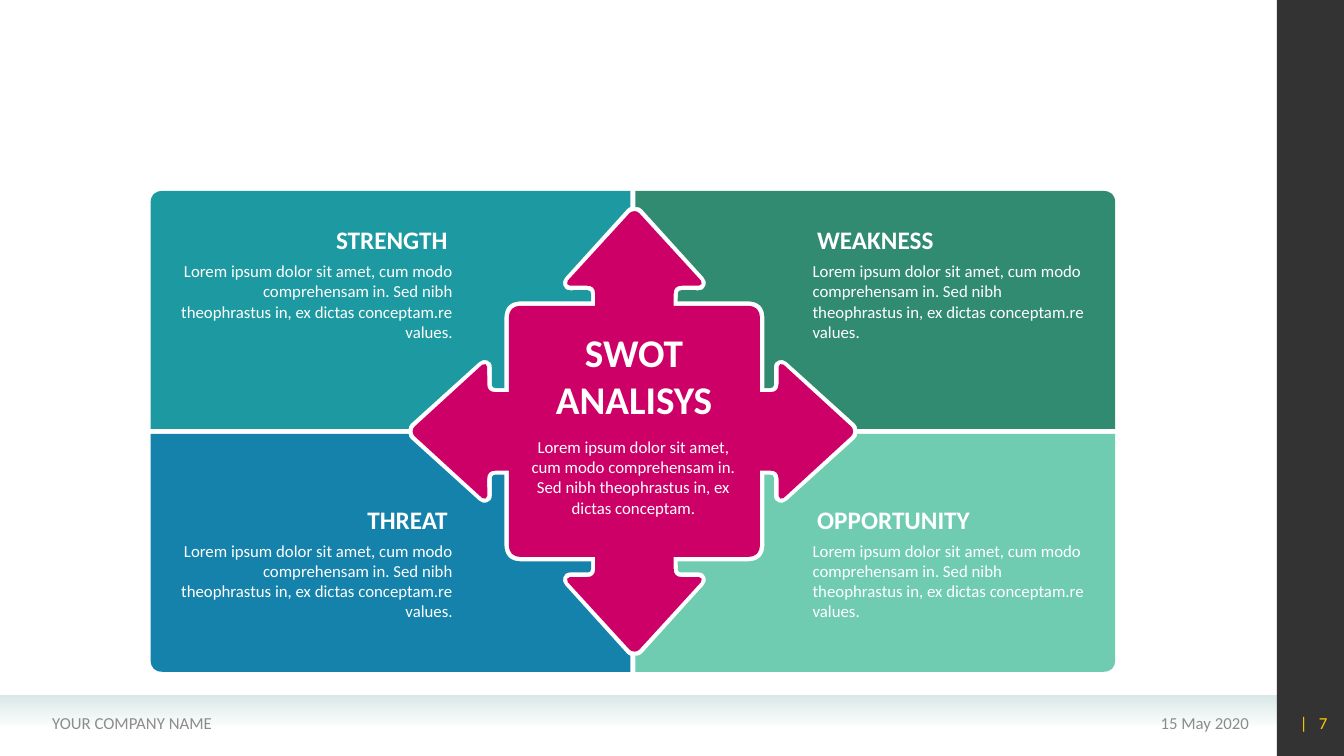
"""Build a SWOT slide: four quadrants around a four-way arrow."""
from math import dist

from lxml import etree
from pptx import Presentation
from pptx.dml.color import RGBColor
from pptx.enum.shapes import MSO_SHAPE
from pptx.enum.text import MSO_ANCHOR, MSO_AUTO_SIZE, PP_ALIGN
from pptx.oxml.ns import qn
from pptx.util import Pt

PX = 4572
RECT = MSO_SHAPE.RECTANGLE
TOP, MIDDLE = MSO_ANCHOR.TOP, MSO_ANCHOR.MIDDLE
LEFT, CENTER, RIGHT = PP_ALIGN.LEFT, PP_ALIGN.CENTER, PP_ALIGN.RIGHT
FIT = MSO_AUTO_SIZE.NONE
THEME = {
    "font": "Calibri", "title": 28, "head": 18, "body": 12,
    "white": "FFFFFF", "gray": "8C8C8C", "gold": "FFCC00",
    "mist": "D9E9E8", "black": "000000", "pink": "CC0066",
    "teal": "1D9AA1", "green": "318B71", "blue": "1482AB", "mint": "70CCB1",
}
MID_X, MID_Y, SHIFT = 1256, 856, 3
SHORT = ("Lorem ipsum dolor sit amet, cum modo comprehensam in. "
         "Sed nibh theophrastus in, ex dictas conceptam.")
LONG = SHORT + "re values."


def color(name):
    return RGBColor.from_string(THEME[name])


def write(box, lines, size, tint="white", align=LEFT, anchor=TOP, bold=False, wrap=True):
    frame = box.text_frame
    frame.auto_size = FIT
    frame.word_wrap = wrap
    frame.vertical_anchor = anchor
    for i, line in enumerate(lines):
        para = frame.paragraphs[0] if i == 0 else frame.add_paragraph()
        para.alignment = align
        for text in line:
            run = para.add_run()
            run.text = text
            run.font.name = THEME["font"]
            run.font.size = Pt(THEME[size])
            run.font.bold = bold
            run.font.color.rgb = color(tint)
    return frame


deck = Presentation()
deck.slide_width, deck.slide_height = 2667 * PX, 1500 * PX
slide = deck.slides.add_slide(deck.slide_layouts[5])
shapes = slide.shapes

band = shapes.add_shape(RECT, 0, 1380 * PX, 2534 * PX, 62 * PX)
band.fill.gradient()
band.fill.gradient_angle = 270
for stop in band.fill.gradient_stops:
    stop.color.rgb = color("mist")
bar = shapes.add_shape(RECT, 2534 * PX, 0, 133 * PX, 1500 * PX)
bar.fill.solid()
bar.fill.fore_color.rgb = color("black")
for panel, alpha in ((band, 0), (bar, 80000)):
    panel.line.fill.background()
    panel.shadow.inherit = False
    tone = list(panel.element.spPr.iter(qn("a:srgbClr")))[-1]
    etree.SubElement(tone, qn("a:alpha"), val=str(alpha))

for x, width, parts, tint, align in (
    (1820, 678, ["15 May 2020"], "gray", RIGHT),
    (84, 980, ["YOUR COMPANY NAME"], "gray", LEFT),
    (2520, 134, ["| ", "7"], "gold", RIGHT),
):
    box = shapes.add_textbox(x * PX, 1394 * PX, width * PX, 80 * PX)
    frame = write(box, [parts], "body", tint, align, MIDDLE)
frame.paragraphs[0].runs[0].font._element.set("spc", "270")

half = [(6, 437, 6), (135, 296, 4), (132, 289, 4), (78, 289, 16), (78, 249, 0)]
turn = half + [(249, 249, 24)] + [(y, x, r) for x, y, r in half[::-1]]
cross = []
for _ in range(4):
    cross += turn
    turn = [(y, -x, r) for x, y, r in turn]

half = [(5, 445, 0), (11, 445, 6), (144, 298, 10), (138, 280, 10), (86, 280, 7), (86, 258, 0)]
quad = half + [(258, 258, 34)] + [(y, x, r) for x, y, r in half[::-1]]
quad += [(957, 5, 0), (957, 477, 24), (5, 477, 0)]

for name, plan, sx, sy in (
    ("pink", cross, 1, 1), ("teal", quad, -1, -1), ("green", quad, 1, -1),
    ("mint", quad, 1, 1), ("blue", quad, -1, 1),
):
    corners = []
    for x, y, r in plan:
        move = SHIFT if 5 < abs(x) < 275 else 0
        corners.append((MID_X + sx * x + move, MID_Y + sy * y, r))
    points, bends = [], []
    for i, (x, y, r) in enumerate(corners):
        ends = []
        for nx, ny, _ in (corners[i - 1], corners[(i + 1) % len(corners)]):
            part = min(1, r / dist((x, y), (nx, ny)))
            ends.append((x + (nx - x) * part, y + (ny - y) * part))
        if r:
            bends.append(len(points) + 1)
            points += [ends[0], (x, y), ends[1]]
        else:
            points.append((x, y))
    dots = [(x * PX, y * PX) for x, y in points]
    pen = shapes.build_freeform(*dots[0], scale=1.0)
    pen.add_line_segments(dots[1:], close=True)
    form = pen.convert_to_shape()
    form.fill.solid()
    form.fill.fore_color.rgb = color(name)
    form.line.fill.background()
    form.shadow.inherit = False
    lines = list(form.element.iter(qn("a:lnTo")))
    for i in bends:
        knee, end = lines[i - 1], lines[i]
        end.insert(0, knee[0])
        end.tag = qn("a:quadBezTo")
        knee.getparent().remove(knee)

for head, x, y, width, align in (
    ("WEAKNESS", 1602, 435, 306, LEFT), ("OPPORTUNITY", 1602, 990, 358, LEFT),
    ("STRENGTH", 622, 435, 286, RIGHT), ("THREAT", 690, 990, 218, RIGHT),
):
    box = shapes.add_textbox(x * PX, y * PX, width * PX, 80 * PX)
    write(box, [[head]], "head", align=align, anchor=MIDDLE, bold=True, wrap=False)
    left = 1593 if align == LEFT else 330
    box = shapes.add_textbox(left * PX, (y + 73) * PX, 588 * PX, 182 * PX)
    write(box, [[LONG]], "body", align=align)

title = shapes.title
title.left, title.top, title.width, title.height = 1058 * PX, 640 * PX, 400 * PX, 208 * PX
write(title, [["SWOT"], ["ANALISYS"]], "title", align=CENTER, anchor=MIDDLE, bold=True, wrap=False)
shapes.element.append(title.element)
box = shapes.add_textbox(1034 * PX, 857 * PX, 446 * PX, 222 * PX)
write(box, [[SHORT]], "body", align=CENTER)

deck.save("out.pptx")
